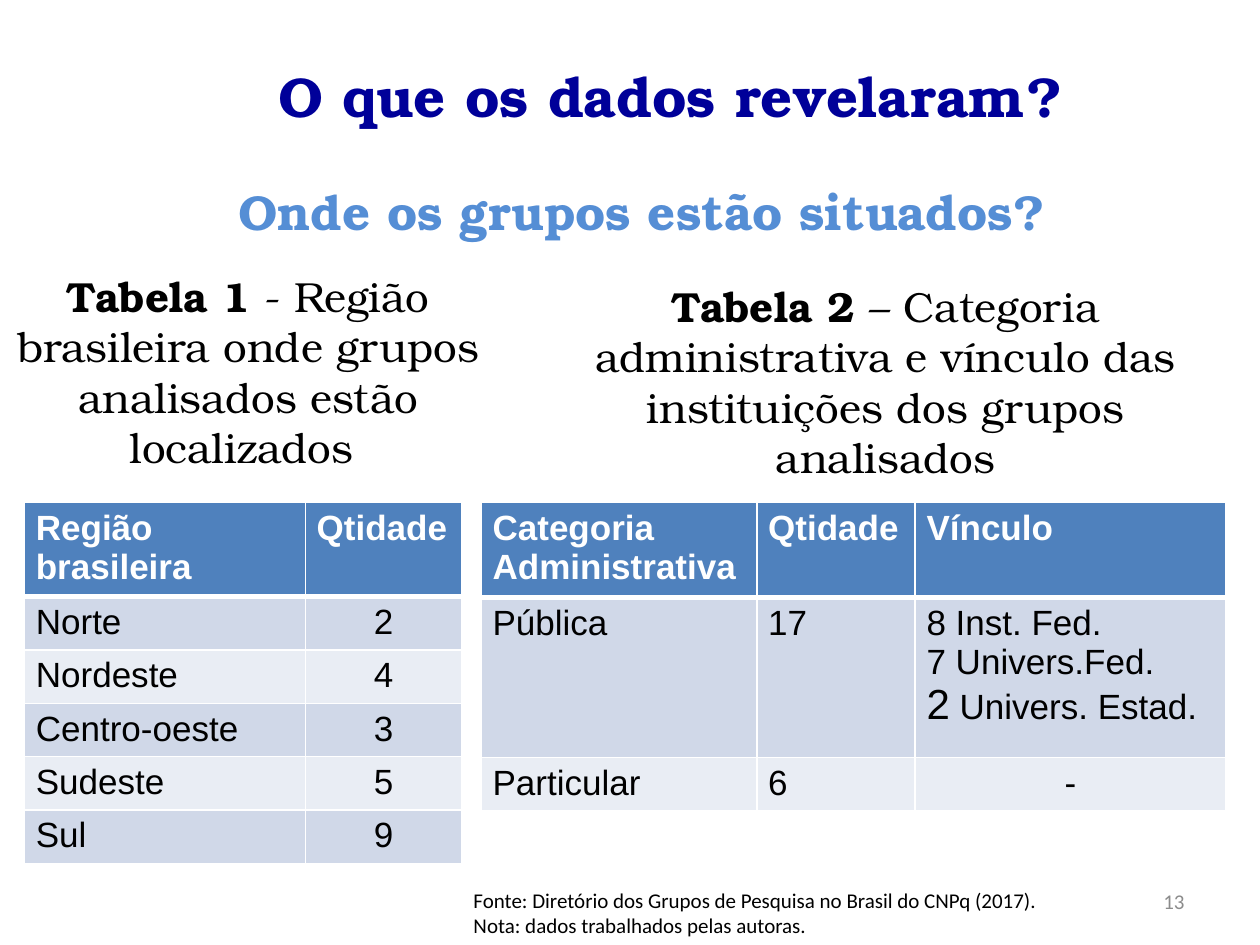
from lxml import etree
from pptx import Presentation
from pptx.dml.color import RGBColor
from pptx.enum.text import MSO_ANCHOR, MSO_AUTO_SIZE, PP_ALIGN
from pptx.oxml.ns import qn
from pptx.util import Pt

LEFT, MID, RIGHT = PP_ALIGN.LEFT, PP_ALIGN.CENTER, PP_ALIGN.RIGHT
TOP, MIDDLE = MSO_ANCHOR.TOP, MSO_ANCHOR.MIDDLE
FIXED = MSO_AUTO_SIZE.NONE
SERIF, SANS, SMALL = "TeX Gyre Bonum", "Arial", "Calibri"


def color(target, code):
    target.rgb = RGBColor.from_string(code)


def write(frame, paras, look, align=LEFT):
    """Each paragraph is a list of (text, changes to the look)."""
    for i, runs in enumerate(paras):
        para = frame.paragraphs[0] if i == 0 else frame.add_paragraph()
        para.alignment = align
        for text, change in runs:
            if text == "\n":
                para.add_line_break()
                continue
            run = para.add_run()
            run.text = text
            vals = {**look, **change}
            color(run.font.color, vals.pop("color"))
            for key, val in vals.items():
                setattr(run.font, key, val)


prs = Presentation()
prs.slide_width, prs.slide_height = Pt(720), Pt(540)
slide = prs.slides.add_slide(prs.slide_layouts[5])

# Text: box, indent, alignment, anchor, look, runs; the title comes first
head = {"name": SERIF, "bold": True}
label = {"name": SERIF, "size": Pt(24), "bold": False, "color": "000000"}
note = {"name": SMALL, "size": Pt(12), "bold": False}
strong = {"bold": True}
texts = [
    ((116, 31.5, 720, 46), 36, LEFT, TOP,
     {**head, "size": Pt(32), "color": "000099"},
     [("O que os dados revelaram?", {})]),
    ((0, 100, 697.5, 41), 36, MID, TOP,
     {**head, "size": Pt(28), "color": "558ED5"},
     [("Onde os grupos estão situados?", {})]),
    ((0, 151, 283.5, 124), 0, MID, TOP, label,
     [("Tabela 1 ", strong),
      ("- Região brasileira onde grupos analisados estão localizados ", {})]),
    ((332, 156.75, 348, 124), 0, MID, TOP, label,
     [("Tabela 2 ", strong),
      ("– Categoria administrativa e vínculo das instituições dos grupos "
       "analisados", {})]),
    ((263.5, 503.75, 343, 36), 0, LEFT, TOP, {**note, "color": "000000"},
     [("Fonte: Diretório dos Grupos de Pesquisa no Brasil do CNPq (2017). ", {}),
      ("\n", {}),
      ("Nota: dados trabalhados pelas autoras.", {})]),
    ((516, 500.5, 168, 29), 0, RIGHT, MIDDLE, {**note, "color": "8C8C8C"},
     [("13", {})]),
]
for i, (area, indent, align, anchor, look, runs) in enumerate(texts):
    box = [Pt(v) for v in area]
    if i == 0:
        shape = slide.shapes.title
        shape.left, shape.top, shape.width, shape.height = box
    else:
        shape = slide.shapes.add_textbox(*box)
    frame = shape.text_frame
    frame.word_wrap = True
    frame.auto_size = FIXED
    frame.vertical_anchor = anchor
    write(frame, [runs], look, align)
    if indent:
        props = frame.paragraphs[0]._p.get_or_add_pPr()
        props.set("marL", str(Pt(indent)))
        props.set("indent", "0")

# Tables: left, column widths, row heights, centred column, rows
bond = [[("8 Inst. Fed.", {})], [("7 Univers.Fed.", {})],
        [("2", {"size": Pt(24)}), (" Univers. Estad.", {})]]
tables = [
    (14, (160.5, 89.5), (54,) + (30.5,) * 5, 1,
     [["Região brasileira", "Qtidade"], ["Norte", "2"], ["Nordeste", "4"],
      ["Centro-oeste", "3"], ["Sudeste", "5"], ["Sul", "9"]]),
    (275, (157.5, 90.5, 177.5), (54.5, 91.25, 30.5), 2,
     [["Categoria Administrativa", "Qtidade", "Vínculo"],
      ["Pública", "17", bond], ["Particular", "6", "-"]]),
]
inset = {"margin_left": Pt(6.5), "margin_right": Pt(6.5),
         "margin_top": Pt(3.5), "margin_bottom": Pt(3.5)}
for left, cols, rows, center, data in tables:
    grid = slide.shapes.add_table(len(rows), len(cols), Pt(left), Pt(287),
                                  Pt(sum(cols)), Pt(sum(rows))).table
    for col, width in zip(grid.columns, cols):
        col.width = Pt(width)
    for r, (row, height) in enumerate(zip(data, rows)):
        grid.rows[r].height = Pt(height)
        for c, value in enumerate(row):
            cell = grid.cell(r, c)
            for key, val in inset.items():
                setattr(cell, key, val)
            props = cell._tc.get_or_add_tcPr()
            for side in "LRTB":
                thick = (r, side) in ((0, "B"), (1, "T"))
                line = etree.SubElement(props, qn("a:ln" + side),
                                        w=str(Pt(3 if thick else 1)))
                fill = etree.SubElement(line, qn("a:solidFill"))
                etree.SubElement(fill, qn("a:srgbClr"), val="FFFFFF")
            cell.fill.solid()
            shade = "4F81BD" if r == 0 else ("E9EDF4", "D0D8E8")[r % 2]
            color(cell.fill.fore_color, shade)
            look = {"name": SANS, "size": Pt(20), "bold": r == 0,
                    "color": "FFFFFF" if r == 0 else "000000"}
            plain = isinstance(value, str)
            paras = [[(value, {})]] if plain else value
            middle = plain and r > 0 and c == center
            write(cell.text_frame, paras, look, MID if middle else LEFT)

prs.save("out.pptx")
